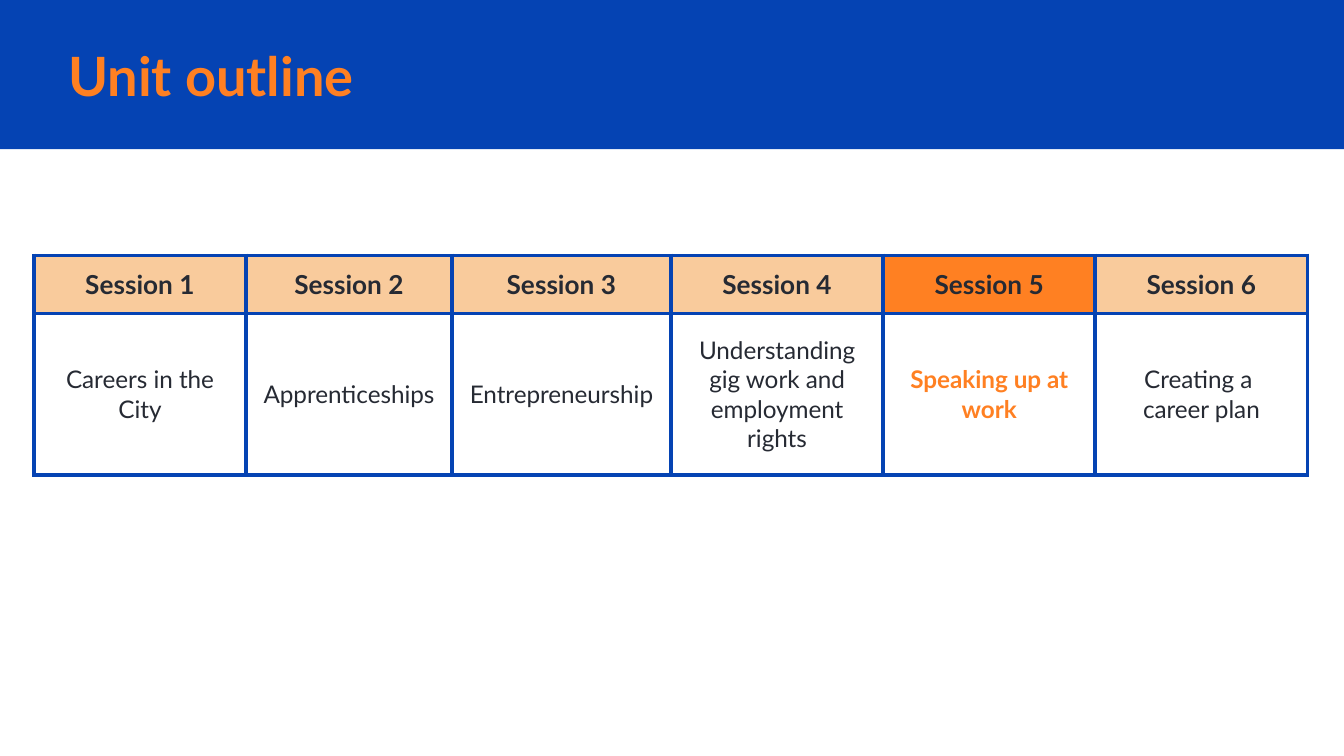
from dataclasses import dataclass

from lxml.etree import SubElement
from pptx import Presentation
from pptx.dml.color import RGBColor
from pptx.enum.shapes import MSO_SHAPE
from pptx.enum.text import MSO_ANCHOR, PP_ALIGN
from pptx.oxml.ns import qn
from pptx.util import Cm, Pt

COLORS = {
    "blue": "0543B3",
    "orange": "FF8022",
    "peach": "F9CB9C",
    "ink": "262A33",
    "white": "FFFFFF",
}
INSET = Cm(0.25)
MARGINS = {f"margin_{side}": INSET for side in ("left", "right", "top", "bottom")}


@dataclass
class Session:
    topic: str
    width: float = 4.01
    current: bool = False


SESSIONS = [
    Session("Careers in the City"),
    Session("Apprenticeships", 3.89),
    Session("Entrepreneurship", 4.14),
    Session("Understanding gig work and employment rights"),
    Session("Speaking up at work", current=True),
    Session("Creating a \ncareer plan"),
]


def rgb(name: str) -> RGBColor:
    return RGBColor.from_string(COLORS[name])


def apply(target, values: dict) -> None:
    for key, value in values.items():
        setattr(target, key, value)


def write(tf, text: str, size: float, color: str, bold: bool, align) -> None:
    tf.text = text
    for p in tf.paragraphs:
        p.alignment = align
        for r in p.runs:
            apply(r.font, {"name": "Lato", "size": Pt(size), "bold": bold})
            r.font.color.rgb = rgb(color)


def add_borders(cell, color: str, width: float) -> None:
    tcPr = cell._tc.get_or_add_tcPr()
    for tag in ("a:lnL", "a:lnR", "a:lnT", "a:lnB"):
        ln = SubElement(tcPr, qn(tag), w=str(Pt(width)))
        fill = SubElement(ln, qn("a:solidFill"))
        SubElement(fill, qn("a:srgbClr"), val=COLORS[color])


def draw_cell(cell, text: str, size: float, color: str, bold: bool, fill: str) -> None:
    apply(cell, {"vertical_anchor": MSO_ANCHOR.MIDDLE, **MARGINS})
    add_borders(cell, "blue", 2.25)
    cell.fill.solid()
    cell.fill.fore_color.rgb = rgb(fill)
    write(cell.text_frame, text, size, color, bold, PP_ALIGN.CENTER)


def draw_header(s, width: int) -> None:
    sp = s.shapes.add_shape(MSO_SHAPE.RECTANGLE, 0, 0, width, Cm(2.82))
    sp.shadow.inherit = False
    sp.fill.solid()
    sp.fill.fore_color.rgb = rgb("blue")
    sp.line.fill.background()
    tf = s.shapes.add_textbox(Cm(1.04), Cm(0.71), Cm(21.5), Cm(1.42)).text_frame
    apply(tf, {"word_wrap": True, "vertical_anchor": MSO_ANCHOR.MIDDLE, **MARGINS})
    write(tf, "Unit outline", 29, "orange", True, PP_ALIGN.LEFT)


def draw_outline(s, sessions: list[Session]) -> None:
    heights = (1.09, 3.05)
    total = sum(session.width for session in sessions)
    table = s.shapes.add_table(
        len(heights), len(sessions), Cm(0.64), Cm(4.83), Cm(total), Cm(sum(heights))
    ).table
    for row, height in zip(table.rows, heights):
        row.height = Cm(height)
    for i, session in enumerate(sessions):
        table.columns[i].width = Cm(session.width)
        now = session.current
        draw_cell(table.cell(0, i), f"Session {i + 1}", 14, "ink", True,
                  "orange" if now else "peach")
        draw_cell(table.cell(1, i), session.topic, 13,
                  "orange" if now else "ink", now, "white")


def main() -> None:
    """Build the unit outline slide."""
    prs = Presentation()
    apply(prs, {"slide_width": Cm(25.4), "slide_height": Cm(14.29)})
    s = prs.slides.add_slide(prs.slide_layouts[6])
    draw_header(s, prs.slide_width)
    draw_outline(s, SESSIONS)
    prs.save("out.pptx")


if __name__ == "__main__":
    main()
